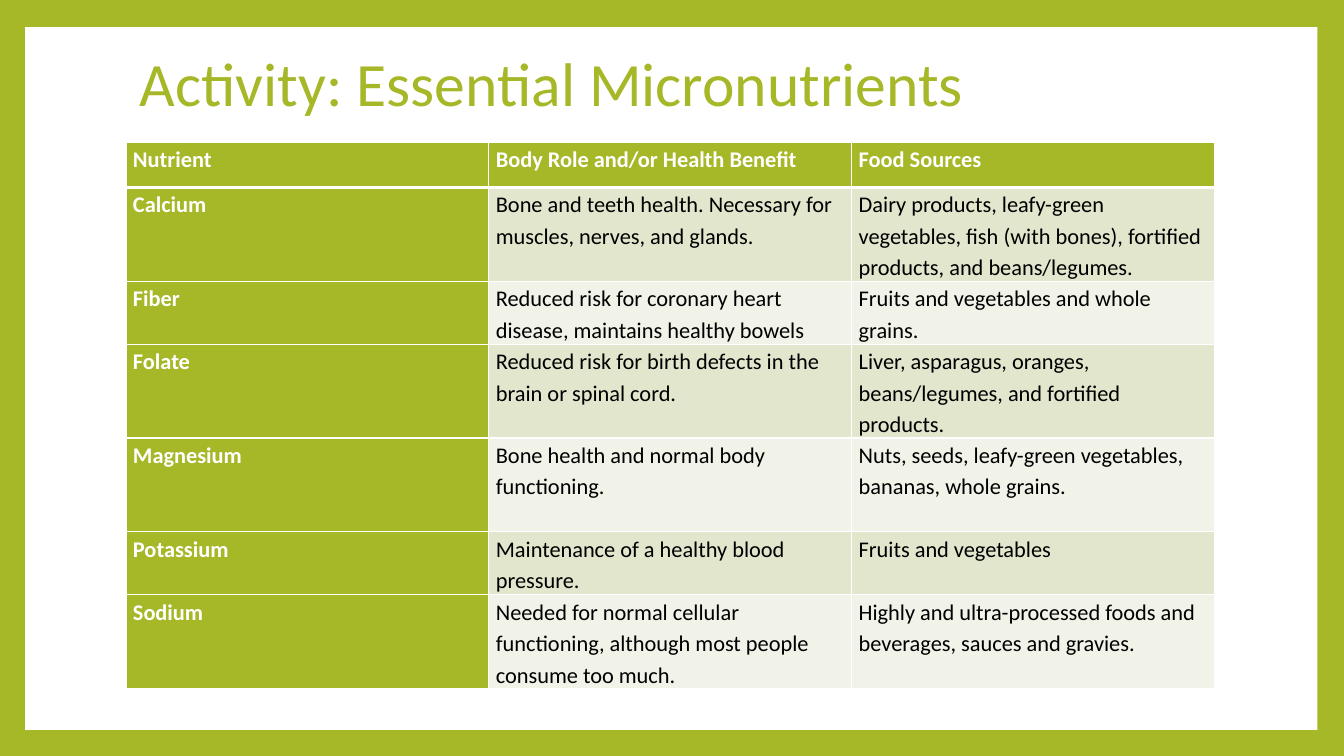
from lxml.etree import SubElement
from pptx import Presentation
from pptx.dml.color import RGBColor
from pptx.enum.shapes import MSO_SHAPE
from pptx.enum.text import MSO_ANCHOR
from pptx.oxml.ns import qn
from pptx.util import Pt

GREEN = RGBColor(0xA6, 0xB7, 0x27)
WHITE = RGBColor(0xFF, 0xFF, 0xFF)
BLACK = RGBColor(0x00, 0x00, 0x00)
BAND_DARK = RGBColor(0xE1, 0xE6, 0xCD)
BAND_LIGHT = RGBColor(0xF1, 0xF3, 0xE8)

COLUMN_WIDTH = 259.2
NUTRIENTS = [
    # row height, then the three cells
    (32.4, "Nutrient", "Body Role and/or Health Benefit", "Food Sources"),
    (67, "Calcium",
     "Bone and teeth health. Necessary for muscles, nerves, and glands.",
     "Dairy products, leafy-green vegetables, fish (with bones), fortified products, and beans/legumes."),
    (45, "Fiber",
     "Reduced risk for coronary heart disease, maintains healthy bowels",
     "Fruits and vegetables and whole grains."),
    (67, "Folate",
     "Reduced risk for birth defects in the brain or spinal cord.",
     "Liver, asparagus, oranges, beans/legumes, and fortified products."),
    (67, "Magnesium",
     "Bone health and normal body functioning.",
     "Nuts, seeds, leafy-green vegetables, bananas, whole grains."),
    (45, "Potassium",
     "Maintenance of a healthy blood pressure.",
     "Fruits and vegetables"),
    (67, "Sodium",
     "Needed for normal cellular functioning, although most people consume too much.",
     "Highly and ultra-processed foods and beverages, sauces and gravies."),
]


def apply_format(target, values):
    for name, value in values.items():
        setattr(target, name, value)


class SlideBuilder:
    font_name = "Calibri"

    def __init__(self, slide):
        self.slide = slide

    def background(self, color):
        fill = self.slide.background.fill
        fill.solid()
        fill.fore_color.rgb = color

    def panel(self, left, top, width, height, color):
        shape = self.slide.shapes.add_shape(
            MSO_SHAPE.RECTANGLE, Pt(left), Pt(top), Pt(width), Pt(height))
        shape.shadow.inherit = False
        shape.fill.solid()
        shape.fill.fore_color.rgb = color
        shape.line.fill.background()

    def add_text(self, text_frame, text, size, color, spacing, bold=False):
        paragraph = text_frame.paragraphs[0]
        paragraph.line_spacing = spacing
        run = paragraph.add_run()
        run.text = text
        apply_format(run.font, {"name": self.font_name, "size": Pt(size), "bold": bold})
        run.font.color.rgb = color

    def title(self, left, top, width, height, text):
        shape = self.slide.shapes.add_textbox(Pt(left), Pt(top), Pt(width), Pt(height))
        apply_format(shape.text_frame, {"word_wrap": True, "vertical_anchor": MSO_ANCHOR.MIDDLE})
        self.add_text(shape.text_frame, text, 44, GREEN, 0.9)

    def borders(self, cell, top, bottom):
        """Draw white cell borders; top and bottom are widths in points."""
        properties = cell._tc.get_or_add_tcPr()
        for side, width in {"L": 1, "R": 1, "T": top, "B": bottom}.items():
            line = SubElement(properties, qn(f"a:ln{side}"), w=str(Pt(width)))
            fill = SubElement(line, qn("a:solidFill"))
            SubElement(fill, qn("a:srgbClr"), val=str(WHITE))

    def cell(self, cell, text, row, column):
        heading = row == 0 or column == 0
        band = BAND_DARK if row % 2 else BAND_LIGHT
        apply_format(cell, {"margin_left": Pt(5), "margin_right": Pt(5),
                            "margin_top": 0, "margin_bottom": 0})
        self.borders(cell, top=3 if row == 1 else 1, bottom=3 if row == 0 else 1)
        cell.fill.solid()
        cell.fill.fore_color.rgb = GREEN if heading else band
        self.add_text(cell.text_frame, text, 16, WHITE if heading else BLACK, 1.15, heading)

    def table(self, left, top, rows):
        column_count = len(rows[0]) - 1
        height = sum(row[0] for row in rows)
        table = self.slide.shapes.add_table(
            len(rows), column_count, Pt(left), Pt(top),
            Pt(COLUMN_WIDTH * column_count), Pt(height)).table
        table.first_col = True
        for column in table.columns:
            column.width = Pt(COLUMN_WIDTH)
        for row, (row_height, *texts) in enumerate(rows):
            table.rows[row].height = Pt(row_height)
            for column, text in enumerate(texts):
                self.cell(table.cell(row, column), text, row, column)


def main():
    presentation = Presentation()
    apply_format(presentation, {"slide_width": Pt(960), "slide_height": Pt(540)})
    builder = SlideBuilder(presentation.slides.add_slide(presentation.slide_layouts[6]))
    builder.background(GREEN)
    builder.panel(18, 19.4, 923, 502, WHITE)
    builder.title(92.9, 8.6, 777.6, 106.6, "Activity: Essential Micronutrients")
    builder.table(90, 101.5, NUTRIENTS)
    presentation.save("out.pptx")


if __name__ == "__main__":
    main()
